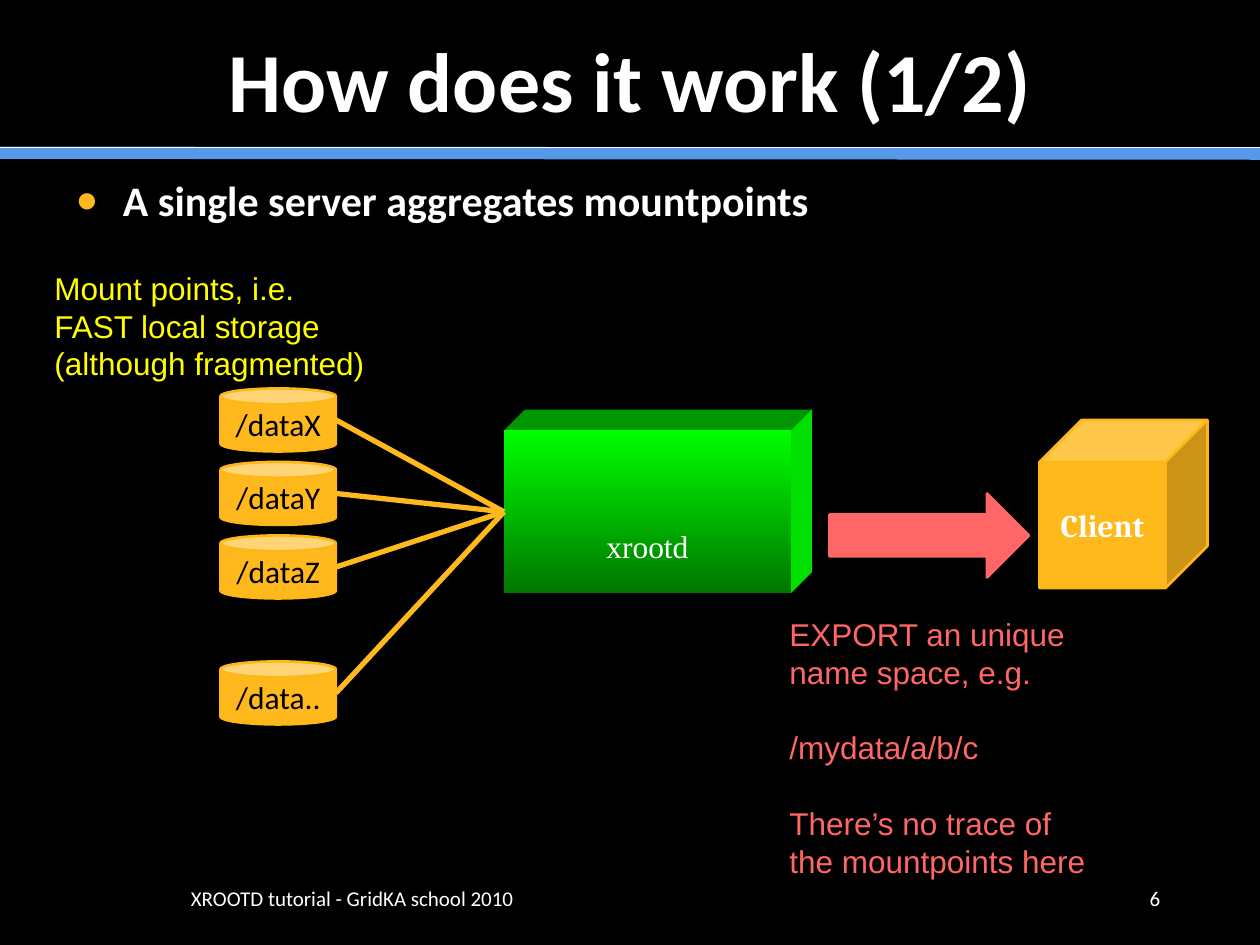
import pptx
import pptx.util
import pptx.dml.color
import pptx.enum.shapes
import pptx.enum.text
import pptx.oxml
import pptx.oxml.ns

Pt = pptx.util.Pt
Rgb = pptx.dml.color.RGBColor.from_string
Kind = pptx.enum.shapes.MSO_SHAPE
Line = pptx.enum.shapes.MSO_CONNECTOR.STRAIGHT
Anchor = pptx.enum.text.MSO_ANCHOR
Align = pptx.enum.text.PP_ALIGN

theme = {
    "back": "000000", "text": "FFFFFF", "dark": "000000",
    "blue": "5799E8", "gold": "FFB91D", "edge": "FFB717",
    "red": "FF6666", "yellow": "FFFF00",
    "lime": "00FF00", "green": "007600", "top": "009600", "side": "00E000",
    "title": 48, "list": 24, "label": 18, "foot": 12,
}


def write(shape, lines, size, color, font, bold=False, align=Align.LEFT,
          anchor=Anchor.TOP, wrap=True, gap=0):
    """Fill a shape with one paragraph per line, gap points apart."""
    frame = shape.text_frame
    frame.word_wrap = wrap
    frame.vertical_anchor = anchor
    for i, line in enumerate(lines):
        para = frame.add_paragraph() if i else frame.paragraphs[0]
        para.alignment = align
        para.space_before = Pt(gap if i else 0)
        run = para.add_run()
        run.text = line
        run.font.size = Pt(theme[size])
        run.font.name = font
        run.font.bold = bold
        run.font.color.rgb = Rgb(theme[color])


def paint(shape, fill, edge=None):
    """Give a shape a flat fill and an optional outline."""
    shape.shadow.inherit = False
    shape.fill.solid()
    shape.fill.fore_color.rgb = Rgb(theme[fill])
    if edge:
        shape.line.color.rgb = Rgb(theme[edge])
        shape.line.width = Pt(1.5)
    else:
        shape.line.fill.background()


deck = pptx.Presentation()
deck.slide_width, deck.slide_height = Pt(720), Pt(540)
slide = deck.slides.add_slide(deck.slide_layouts[1])
slide.background.fill.solid()
slide.background.fill.fore_color.rgb = Rgb(theme["back"])
shapes = slide.shapes
links = []

# Rule below the title
for y, end, color, width in ((87.3, 87.8, "blue", 7), (84.2, 84.2, "text", 0.5)):
    rule = shapes.add_connector(Line, Pt(0), Pt(y), Pt(720), Pt(end))
    links.append((rule, color, width))

# Title and list
title, body = shapes.title, slide.placeholders[1]
for box, y, high in ((title, 12, 66), (body, 96, 42)):
    box.left, box.top, box.width, box.height = Pt(36), Pt(y), Pt(648), Pt(high)
write(title, ["How does it work (1/2)"], "title", "text", "Calibri", True,
      Align.CENTER, Anchor.MIDDLE)
write(body, ["A single server aggregates mountpoints"], "list", "text",
      "Calibri", True)
body.text_frame.paragraphs[0].space_before = Pt(20)
props = body.text_frame.paragraphs[0]._p.get_or_add_pPr()
props.set("marL", str(Pt(27)))
props.set("indent", str(-Pt(27)))
space = pptx.oxml.ns.nsdecls("a")
for xml in (f'<a:buClr {space}><a:srgbClr val="{theme["gold"]}"/></a:buClr>',
            f'<a:buSzPct {space} val="90000"/>',
            f'<a:buFont {space} typeface="Arial"/>',
            f'<a:buChar {space} char="●"/>'):
    props.append(pptx.oxml.parse_xml(xml))

# Footer and page number
for x, wide, text, align in (
        (102, 384, "XROOTD tutorial - GridKA school 2010", Align.LEFT),
        (636, 48, "6", Align.CENTER)):
    foot = shapes.add_textbox(Pt(x), Pt(498), Pt(wide), Pt(30))
    write(foot, [text], "foot", "text", "Calibri", align=align,
          anchor=Anchor.MIDDLE)

# Server block: top and side faces, then the front
faces = (
    ("top", ((288, 246), (300, 234), (464, 234), (452, 246))),
    ("side", ((452, 246), (464, 234), (464, 327), (452, 339))),
)
for color, dots in faces:
    path = shapes.build_freeform(Pt(dots[0][0]), Pt(dots[0][1]))
    path.add_line_segments([(Pt(x), Pt(y)) for x, y in dots[1:]])
    paint(path.convert_to_shape(), color)
front = shapes.add_shape(Kind.RECTANGLE, Pt(288), Pt(246), Pt(164), Pt(93))
paint(front, "lime")
front.fill.gradient()
front.fill.gradient_angle = 270
for stop, color in zip(front.fill.gradient_stops, ("lime", "green")):
    stop.color.rgb = Rgb(theme[color])
name = shapes.add_textbox(Pt(288), Pt(246), Pt(164), Pt(132))
write(name, ["xrootd"], "label", "text", "Times New Roman",
      align=Align.CENTER, anchor=Anchor.MIDDLE)

# Notes
note = shapes.add_textbox(Pt(444), Pt(348), Pt(186), Pt(160))
write(note, ["EXPORT an unique name space, e.g.", "/mydata/a/b/c",
             "There’s no trace of the mountpoints here"],
      "label", "red", "Arial", gap=21.5)
note = shapes.add_textbox(Pt(24), Pt(150), Pt(194), Pt(73))
write(note, ["Mount points, i.e.", "FAST local storage",
             "(although fragmented)"],
      "label", "yellow", "Arial", wrap=False)

# Mount points, each joined to the server
for text, y in (("/dataX", 222), ("/dataY", 264), ("/dataZ", 306),
                ("/data..", 378)):
    can = shapes.add_shape(Kind.CAN, Pt(126), Pt(y), Pt(66), Pt(36))
    paint(can, "gold", "edge")
    write(can, [text], "label", "dark", "Calibri", align=Align.CENTER,
          anchor=Anchor.MIDDLE)
    link = shapes.add_connector(Line, Pt(192), Pt(y + 18), Pt(288), Pt(292.5))
    link.end_connect(front, 1)
    links.append((link, "gold", 3))

# Client and export arrow
cube = shapes.add_shape(Kind.CUBE, Pt(594), Pt(240), Pt(96), Pt(96))
paint(cube, "gold", "edge")
write(cube, ["Client"], "label", "text", "Cambria", True, Align.CENTER,
      Anchor.MIDDLE)
arrow = shapes.add_shape(Kind.RIGHT_ARROW, Pt(474), Pt(282), Pt(114), Pt(48))
paint(arrow, "red", "red")

# Line looks
for link, color, width in links:
    link.line.color.rgb = Rgb(theme[color])
    link.line.width = Pt(width)
    link._element.spPr.append(pptx.oxml.parse_xml(f"<a:effectLst {space}/>"))

deck.save("out.pptx")
